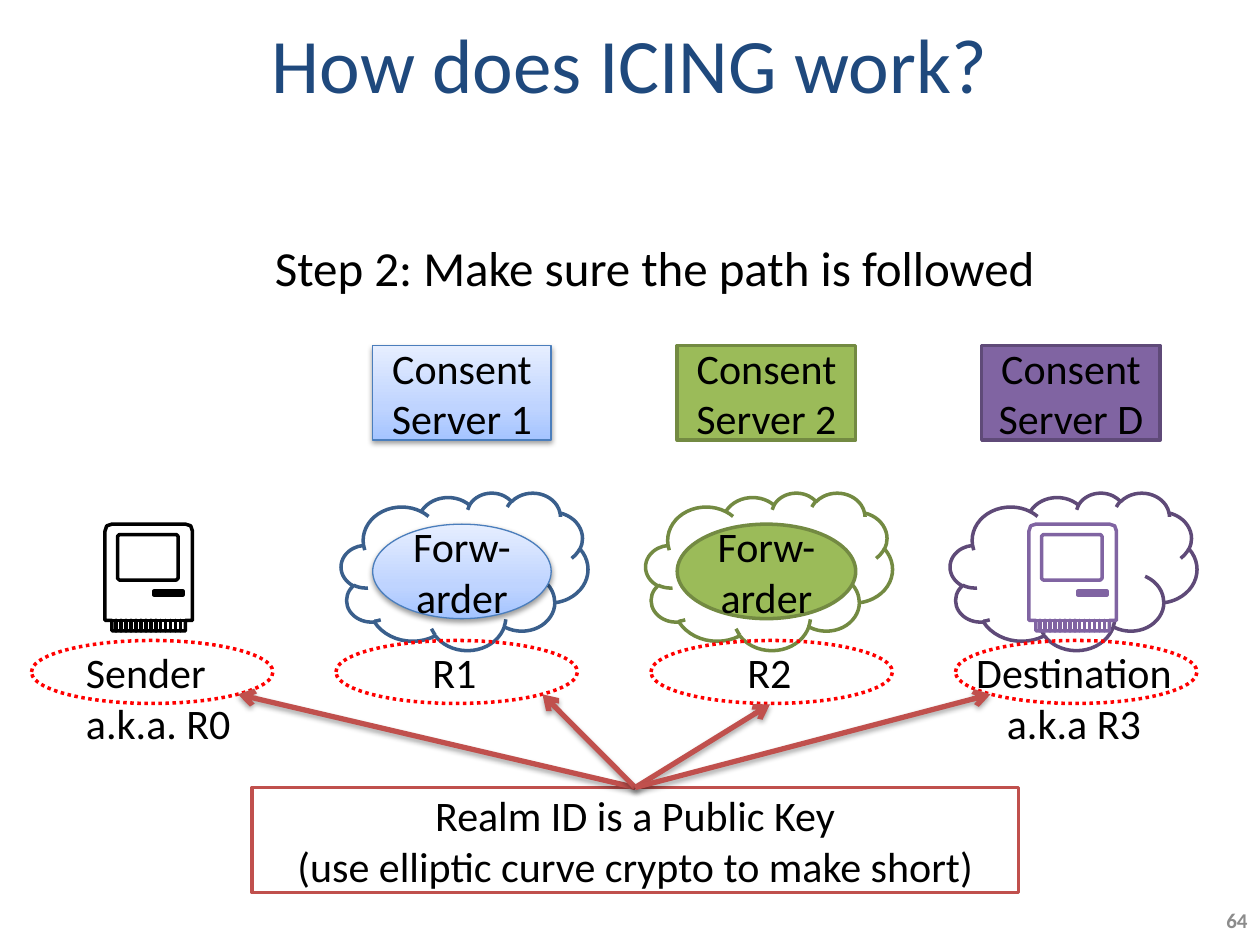
from pptx import Presentation
from pptx import util as u
from pptx.dml import color
from pptx.enum import dml, shapes, text
from pptx.oxml import ns, parse_xml

KIND = shapes.MSO_SHAPE
ALIGN = {"l": text.PP_ALIGN.LEFT, "c": text.PP_ALIGN.CENTER, "r": text.PP_ALIGN.RIGHT}
BLUE = [(0, "A4C4FF"), (35, "BFD4FF"), (100, "E6EEFF")]


def rgb(code):
    """Turn a hex string into a colour."""
    return color.RGBColor.from_string(code)


def pts(*vals):
    """Turn numbers into lengths in points."""
    return [u.Pt(val) for val in vals]


def node(xml):
    """Parse a drawing element."""
    return parse_xml(xml.replace(" ", f" {ns.nsdecls('a')} ", 1))


def write(frame, words, size=24, ink="000000", bold=False, align="c", wrap=True, mid=True):
    """Fill a text frame, one paragraph for each line of the words."""
    frame.word_wrap = wrap
    frame.vertical_anchor = text.MSO_ANCHOR.MIDDLE if mid else text.MSO_ANCHOR.TOP
    for i, row in enumerate(words.split("\n")):
        para = frame.add_paragraph() if i else frame.paragraphs[0]
        para.alignment = ALIGN[align]
        run = para.add_run()
        run.text = row
        run.font.name, run.font.size, run.font.bold = "Calibri", u.Pt(size), bold
        run.font.color.rgb = rgb(ink)


def label(slide, box, words, **form):
    """Add a text box."""
    write(slide.shapes.add_textbox(*pts(*box)).text_frame, words, **form)


def shade(item, alpha, dist):
    """Add a soft shadow that falls straight down."""
    props = item.element.spPr
    fx = props.find(ns.qn("a:effectLst"))
    if fx is None:
        fx = node("<a:effectLst />")
        props.append(fx)
    fx.append(node(
        f'<a:outerShdw blurRad="{u.Pt(3.1)}" dist="{u.Pt(dist)}" dir="5400000" rotWithShape="0">'
        f'<a:srgbClr val="000000"><a:alpha val="{alpha * 1000}"/></a:srgbClr></a:outerShdw>'))


def blend(item, stops):
    """Fill a shape with a gradient that rises from its base."""
    item.fill.background()
    props = item.element.spPr
    rows = "".join(f'<a:gs pos="{pos * 1000}"><a:srgbClr val="{code}"/></a:gs>'
                   for pos, code in stops)
    props.replace(props.find(ns.qn("a:noFill")), node(
        f'<a:gradFill rotWithShape="1"><a:gsLst>{rows}</a:gsLst>'
        '<a:lin ang="16200000" scaled="0"/></a:gradFill>'))


def style(item, edge, fill=None, width=2):
    """Set the fill and the outline of a shape."""
    item.shadow.inherit = False
    if isinstance(fill, list):
        blend(item, fill)
        shade(item, 38, 1.6)
    elif fill:
        item.fill.solid()
        item.fill.fore_color.rgb = rgb(fill)
    else:
        item.fill.background()
    item.line.color.rgb = rgb(edge)
    item.line.width = u.Pt(width)


def form(slide, kind, box, edge, fill=None, width=2, words=None):
    """Add a preset shape, with its words if any."""
    item = slide.shapes.add_shape(kind, *pts(*box))
    style(item, edge, fill, width)
    if words:
        write(item.text_frame, words)
    return item


def realm(slide, box, name, edge, fill, rim, width=2, fwd=True):
    """Draw a cloud with its consent server and forwarder."""
    x, y, wide, high = box
    form(slide, KIND.CLOUD, (x, y + 84, wide, 90), rim, "FFFFFF")
    form(slide, KIND.RECTANGLE, (x + 18, y, 102, 54), edge, fill, width,
         f"Consent Server {name}")
    if fwd:
        form(slide, KIND.OVAL, (x + 18, y + 102, 102, 54), edge, fill, width, "Forw-arder")


def frame(x, y, wide, high, cut):
    """List the corners of a box with cut corners."""
    right, base = x + wide, y + high
    return [(x + cut, y), (right - cut, y), (right, y + cut), (right, base - cut),
            (right - cut, base), (x + cut, base), (x, base - cut), (x, y + cut)]


def host(slide, box, edge, fill=None):
    """Draw a desktop computer as one outline."""
    x, y, wide, high = box
    foot = high - 6
    body = [(4, 0), (wide - 4, 0), (wide - 1, 1), (wide, 4), (wide, foot), (wide - 4, foot),
            (wide - 4, high), (4, high), (4, foot), (0, foot), (0, 4), (1, 1)]
    drive = [(28, 38.4), (44.6, 38.4), (44.6, 40.4), (28, 40.4)]
    vents = [[(6.4 + 2.83 * i, foot), (6.4 + 2.83 * i, high)] for i in range(14)]
    base = [(4, foot), (wide - 4, foot)]
    pen = None
    for part in [body, frame(7.2, 6, 34.6, 26, 1), drive, base, *vents]:
        spots = [pts(x + a, y + b) for a, b in part]
        if pen is None:
            pen = slide.shapes.build_freeform(*spots[0])
        else:
            pen.move_to(*spots[0])
        pen.add_line_segments(spots[1:], close=True)
    style(pen.convert_to_shape(), edge, fill)


def ring(slide, box):
    """Circle a realm name with a dotted line."""
    form(slide, KIND.OVAL, box, "FF0000").line.dash_style = dml.MSO_LINE.ROUND_DOT


def arrow(slide, note, end):
    """Point from the top of the note to a ring."""
    item = slide.shapes.add_connector(shapes.MSO_CONNECTOR.STRAIGHT, 0, 0, *pts(*end))
    item.begin_connect(note, 0)
    item.line.color.rgb = rgb("C0504D")
    item.line.width = u.Pt(3)
    item.element.spPr.find(ns.qn("a:ln")).append(node('<a:tailEnd type="arrow"/>'))
    shade(item, 35, 1.8)


def keys(slide, box, tops):
    """Ring the realm names and point at them from the note on keys."""
    x, y, wide, high = box
    for left in tops:
        ring(slide, (left, y - 84, 138, 36))
    note = form(slide, KIND.RECTANGLE, box, "C0504D", "FFFFFF",
                words="Realm ID is a Public Key\n(use elliptic curve crypto to make short)")
    mid, low = y - 66, 18 * 0.71
    side = 69 * 0.71
    ends = [(tops[0] + 69 + side, mid + low), (tops[1] + 69 + side, mid + low),
            (tops[2] + 68, mid + 18.5), (tops[3] + 69 - side, mid + low)]
    for end in ends:
        arrow(slide, note, end)


def main():
    """Build the slide and save it."""
    deck = Presentation()
    deck.slide_width, deck.slide_height = pts(720, 540)
    slide = deck.slides.add_slide(deck.slide_layouts[6])
    label(slide, (36, 0, 648, 72), "How does ICING work?", size=44, ink="1F497D")
    label(slide, (150, 132, 453.6, 41), "Step 2: Make sure the path is followed",
          size=28, align="l", wrap=False, mid=False)
    looks = [("1", "4B7EBC", BLUE, "3A5F8C", 0.75),
             ("2", "738A42", "9BBB59", "738A42", 2),
             ("D", "5F4A78", "8064A2", "5F4A78", 2)]
    for i, look in enumerate(looks):
        realm(slide, (195 + 174 * i, 197.5, 141, 174), *look, fwd=look[0] != "D")
    host(slide, (60, 299.5, 50, 61), "000000")
    host(slide, (588, 299.5, 50, 61), "8064A2", "FFFFFF")
    names = [(42, 98, "Sender\na.k.a. R0", "l"), (240, 39.6, "R1", "l"),
             (420, 39.6, "R2", "l"), (550, 127.4, "Destination\na.k.a R3", "c")]
    for x, wide, words, align in names:
        high = 65.5 if "\n" in words else 36.5
        label(slide, (x, 366, wide, high), words, align=align, wrap=False, mid=False)
    keys(slide, (144, 450, 438, 60), [18, 192, 372, 546])
    label(slide, (670, 511, 50, 29), "64", size=12, ink="8C8C8C", bold=True, align="r")
    deck.save("out.pptx")


if __name__ == "__main__":
    main()
